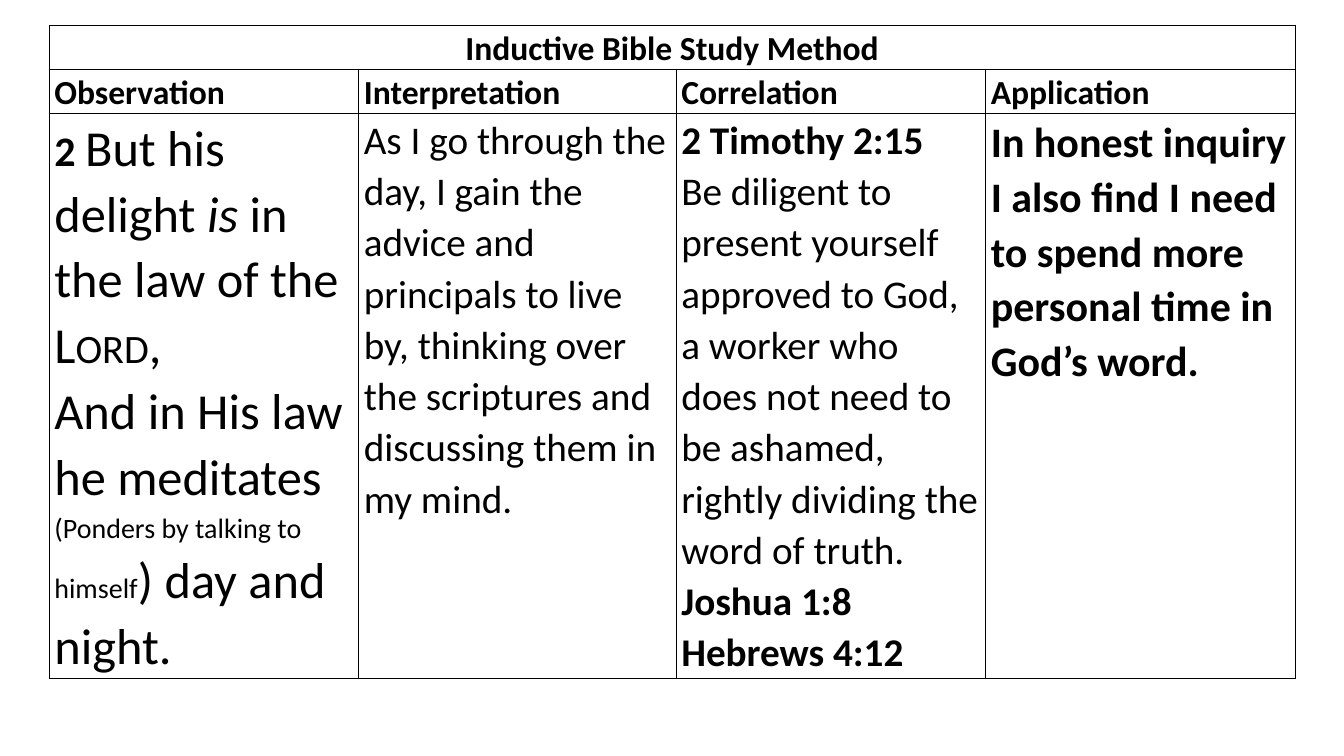
from dataclasses import dataclass

from lxml import etree
from pptx import Presentation
from pptx.dml.color import RGBColor
from pptx.enum import text as t
from pptx.oxml import ns
from pptx.util import Cm, Pt


@dataclass(frozen=True)
class Theme:
    """Colours, font and type sizes of the slide."""
    ink: str = "000000"
    paper: str = "FFFFFF"
    font: str = "Calibri"
    heading: int = 24
    verse: int = 36
    emphasis: int = 30
    body: int = 28
    aside: int = 20
    rule: float = 1
    spacing: float = 1.07


THEME = Theme()
TITLE = "Inductive Bible Study Method"
STEPS = ("Observation", "Interpretation", "Correlation", "Application")
COLUMN_WIDTHS = (7.8, 8, 7.8, 7.8)
ROW_HEIGHTS = (1.04, 1.12, 14.22)

VERSE = {"size": THEME.verse}
HEADING = {"size": THEME.heading, "bold": True}
BODY = {"size": THEME.body}
REFERENCE = {"size": THEME.body, "bold": True}

OBSERVATION = [[
    ("2 ", {"size": THEME.emphasis, "bold": True}),
    ("But his delight ", VERSE),
    ("is", {"size": THEME.verse, "italic": True}),
    (" in the law of the ", VERSE),
    ("Lord", {"size": THEME.verse, "small_caps": True}),
    (",\nAnd in His law he meditates ", VERSE),
    ("(Ponders by talking to himself", {"size": THEME.aside}),
    (") day and night.", VERSE),
]]
INTERPRETATION = [[(
    "As I go through the day, I gain the advice and principals to live by, "
    "thinking over the scriptures and discussing them in my mind.", BODY)]]
CORRELATION = [
    [("2 Timothy 2:15 ", REFERENCE)],
    [("Be diligent to present yourself approved to God, a worker who does not "
      "need to be ashamed, rightly dividing the word of truth.", BODY)],
    [("Joshua 1:8", REFERENCE)],
    [("Hebrews 4:12", REFERENCE)],
]
APPLICATION = [[(
    "In honest inquiry I also find I need to spend more personal time in "
    "God’s word.", {"size": THEME.emphasis, "bold": True})]]


def add_text(paragraph, content, *, size, bold=False, italic=False, small_caps=False):
    """Append formatted text to a paragraph, turning newlines into line breaks."""
    for index, line in enumerate(content.split("\n")):
        if index:
            paragraph.add_line_break()
        run = paragraph.add_run()
        run.text = line
        font = run.font
        font.name, font.size = THEME.font, Pt(size)
        font.bold, font.italic = bold, italic
        font.color.rgb = RGBColor.from_string(THEME.ink)
        if small_caps:
            run._r.get_or_add_rPr().set("cap", "small")


def style_cell(cell):
    """Give a cell its borders, fill and margins."""
    properties = cell._tc.get_or_add_tcPr()
    for side in ("lnL", "lnR", "lnT", "lnB"):
        border = etree.SubElement(properties, ns.qn(f"a:{side}"), w=str(Pt(THEME.rule)))
        fill = etree.SubElement(border, ns.qn("a:solidFill"))
        etree.SubElement(fill, ns.qn("a:srgbClr"), val=THEME.ink)
    cell.fill.solid()
    cell.fill.fore_color.rgb = RGBColor.from_string(THEME.paper)
    cell.margin_left = cell.margin_right = Cm(0.13)
    cell.margin_top = cell.margin_bottom = 0
    cell.vertical_anchor = t.MSO_ANCHOR.TOP


def fill_cell(cell, paragraphs, align=t.PP_ALIGN.LEFT):
    """Write paragraphs of formatted runs into a cell."""
    frame = cell.text_frame
    for index, runs in enumerate(paragraphs):
        paragraph = frame.add_paragraph() if index else frame.paragraphs[0]
        paragraph.alignment = align
        paragraph.line_spacing = THEME.spacing
        for content, look in runs:
            add_text(paragraph, content, **look)


def add_study_table(slide, left, top, width, height):
    """Place the study method table in the given box."""
    study = slide.shapes.add_table(
        len(ROW_HEIGHTS), len(STEPS), left, top, width, height).table
    study.first_row = study.horz_banding = False
    for column, share in zip(study.columns, COLUMN_WIDTHS):
        column.width = int(width * share / sum(COLUMN_WIDTHS))
    for row, share in zip(study.rows, ROW_HEIGHTS):
        row.height = int(height * share / sum(ROW_HEIGHTS))
    for cell in study.iter_cells():
        style_cell(cell)

    study.cell(0, 0).merge(study.cell(0, len(STEPS) - 1))
    fill_cell(study.cell(0, 0), [[(TITLE, HEADING)]], t.PP_ALIGN.CENTER)
    answers = (OBSERVATION, INTERPRETATION, CORRELATION, APPLICATION)
    for index, (step, answer) in enumerate(zip(STEPS, answers)):
        fill_cell(study.cell(1, index), [[(step, HEADING)]])
        fill_cell(study.cell(2, index), answer)


def main():
    """Build and save the slide."""
    deck = Presentation()
    deck.slide_width, deck.slide_height = Cm(33.87), Cm(19.05)
    slide = deck.slides.add_slide(deck.slide_layouts[6])
    add_study_table(slide, Cm(1.24), Cm(0.64),
                    Cm(sum(COLUMN_WIDTHS)), Cm(sum(ROW_HEIGHTS)))
    deck.save("out.pptx")


if __name__ == "__main__":
    main()
